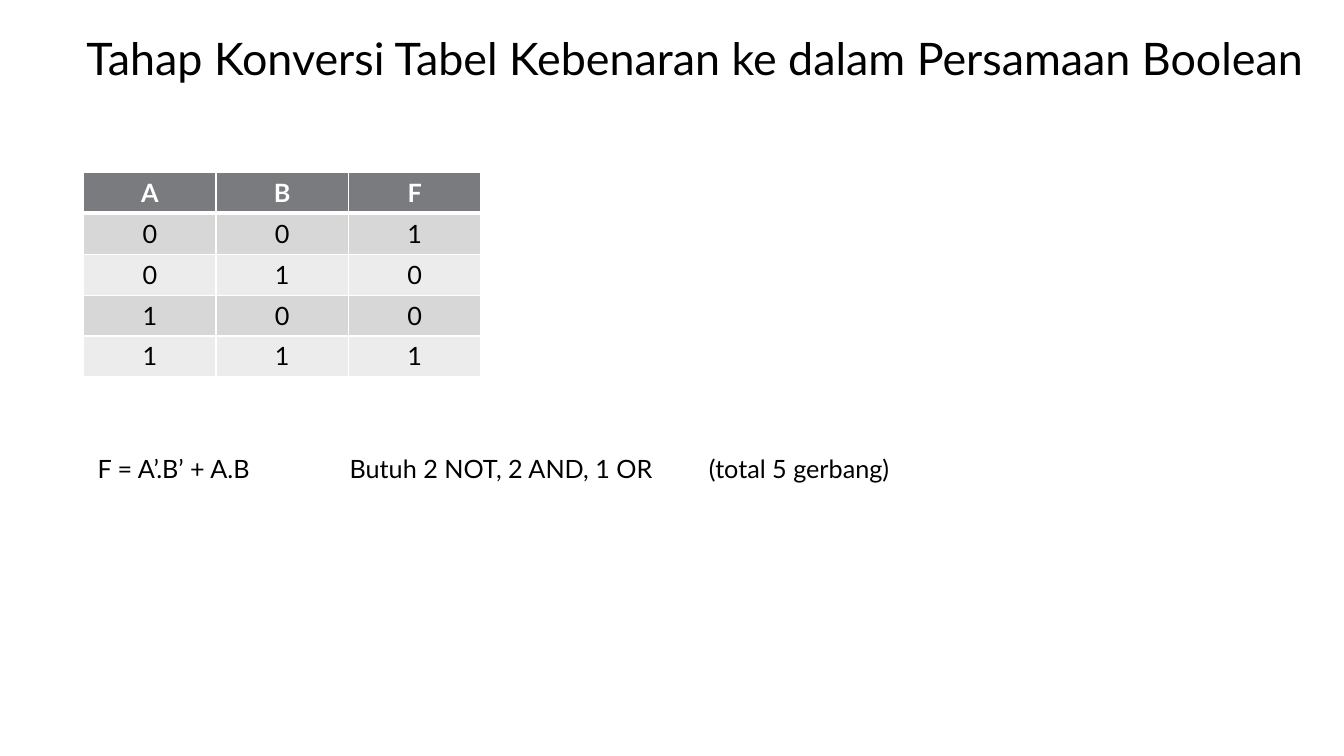
from lxml.etree import SubElement as Sub
from pptx import Presentation
from pptx.dml.color import RGBColor as RGB
from pptx.enum.text import MSO_ANCHOR as Anchor, MSO_AUTO_SIZE as Fit, PP_ALIGN as Align
from pptx.oxml.ns import qn
from pptx.util import Inches, Pt


def style(para, size, color="000000", bold=False):
    for run in para.runs:
        font = run.font
        font.name, font.size, font.bold = "Lato", Pt(size), bold
        font.color.rgb = RGB.from_string(color)


def edge(cell, side, width):
    line = Sub(cell._tc.get_or_add_tcPr(), qn("a:ln" + side), w=str(Pt(width)))
    Sub(Sub(line, qn("a:solidFill")), qn("a:srgbClr"), val="FFFFFF")


prs = Presentation()
prs.slide_width, prs.slide_height = Inches(13.33), Inches(7.5)
slide = prs.slides.add_slide(prs.slide_layouts[6])

# Title and equation
texts = [
    ("Tahap Konversi Tabel Kebenaran ke dalam Persamaan Boolean", 32,
     (0.76, 0.26, 12.3, 0.64)),
    ("F = A’.B’ + A.B \t\tButuh 2 NOT, 2 AND, 1 OR\t (total 5 gerbang)", 18,
     (0.87, 4.45, 11.24, 0.4)),
]
for text, size, place in texts:
    frame = slide.shapes.add_textbox(*map(Inches, place)).text_frame
    frame.word_wrap = True
    frame.auto_size = Fit.SHAPE_TO_FIT_TEXT
    frame.text = text
    style(frame.paragraphs[0], size)

# Truth table
rows = ["ABF", "001", "010", "100", "111"]
place = map(Inches, (0.83, 1.71, 3.94, 2.03))
table = slide.shapes.add_table(len(rows), 3, *place).table
for r, row in enumerate(rows):
    head = r == 0
    fill = "797B7E" if head else "D7D7D8" if r % 2 else "ECECEC"
    for c, text in enumerate(row):
        cell = table.cell(r, c)
        cell.text = text
        cell.vertical_anchor = Anchor.TOP
        para = cell.text_frame.paragraphs[0]
        para.alignment = Align.CENTER
        style(para, 18, "FFFFFF" if head else "000000", head)
        # Thick rule under the header row
        for side, width in zip("LRTB", (1, 1, 3 if r == 1 else 1, 3 if head else 1)):
            edge(cell, side, width)
        cell.fill.solid()
        cell.fill.fore_color.rgb = RGB.from_string(fill)

prs.save("out.pptx")
